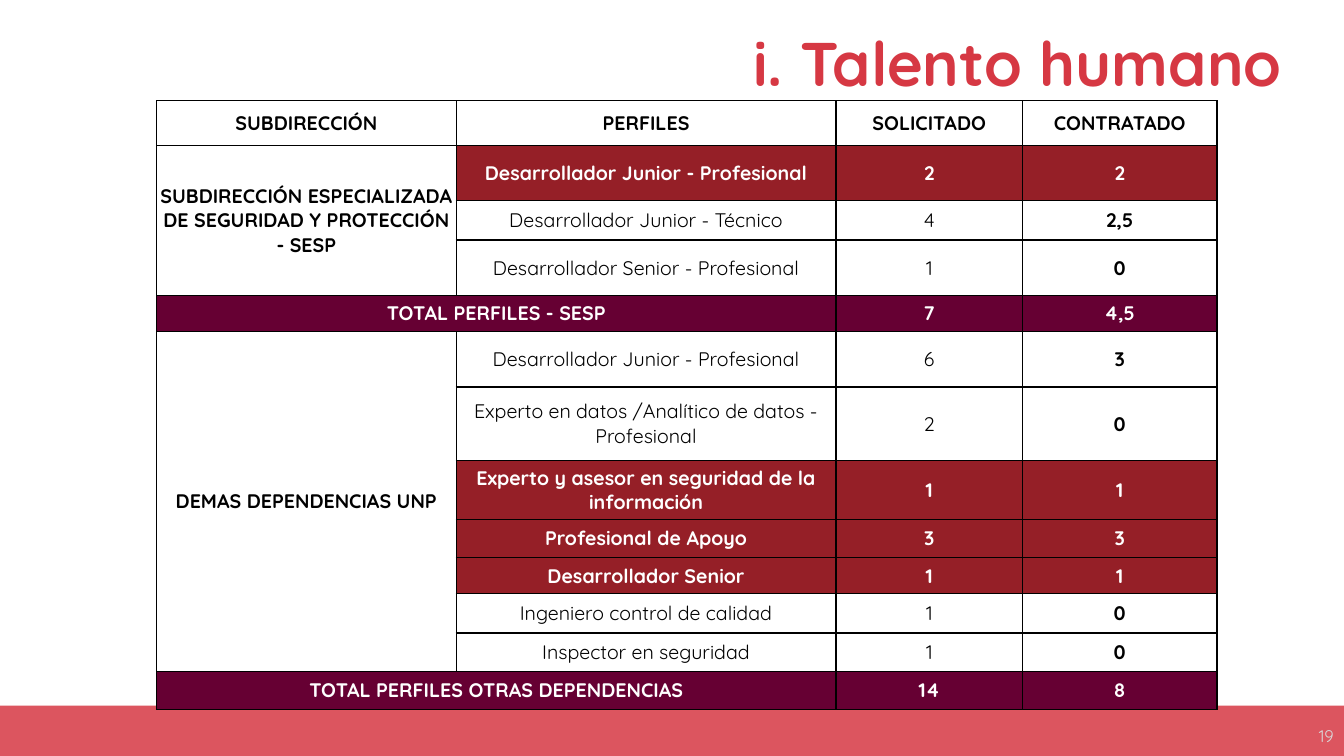
from lxml import etree
from pptx import Presentation
from pptx import util as u
from pptx.dml.color import RGBColor
from pptx.enum import shapes, text
from pptx.oxml.ns import qn

Pt = u.Pt
FONT = "Quicksand"
COLORS = {
    "red": "D63843",
    "hired": "951F27",
    "total": "660033",
    "black": "000000",
    "white": "FFFFFF",
    "grey": "D9D9D9",
}
COLUMN_WIDTHS = [213.8, 271.4, 133.2, 139]
HEADINGS = ["SUBDIRECCIÓN", "PERFILES", "SOLICITADO", "CONTRATADO"]
SESP = "SUBDIRECCIÓN ESPECIALIZADA DE SEGURIDAD Y PROTECCIÓN - SESP"
ROWS = [
    ("heading", 31.7, HEADINGS),
    ("hired", 39.6, [SESP, "Desarrollador Junior - Profesional", "2", "2"]),
    ("open", 28.1, ["", "Desarrollador Junior - Técnico", "4", "2,5"]),
    ("open", 39.6, ["", "Desarrollador Senior - Profesional", "1", "0"]),
    ("total", 25.9, ["TOTAL PERFILES - SESP", "", "7", "4,5"]),
    ("open", 39.6, ["DEMAS DEPENDENCIAS UNP", "Desarrollador Junior - Profesional", "6", "3"]),
    ("open", 52.6, ["", "Experto en datos /Analítico de datos - Profesional", "2", "0"]),
    ("hired", 41.8, ["", "Experto y asesor en seguridad de la información", "1", "1"]),
    ("hired", 27.4, ["", "Profesional de Apoyo", "3", "3"]),
    ("hired", 25.9, ["", "Desarrollador Senior", "1", "1"]),
    ("open", 28.1, ["", "Ingeniero control de calidad", "1", "0"]),
    ("open", 27.4, ["", "Inspector en seguridad", "1", "0"]),
    ("total", 27.4, ["TOTAL PERFILES OTRAS DEPENDENCIAS", "", "14", "8"]),
]
MERGES = [((1, 0), (3, 0)), ((4, 0), (4, 1)), ((5, 0), (11, 0)), ((12, 0), (12, 1))]


def color(name):
    return RGBColor.from_string(COLORS[name])


def write(frame, wording, size, ink, bold, align):
    frame.text = wording
    paragraph = frame.paragraphs[0]
    paragraph.alignment = align
    for run in paragraph.runs:
        run.font.name = FONT
        run.font.size = Pt(size)
        run.font.bold = bold
        run.font.color.rgb = color(ink)


def add_band(slide):
    band = slide.shapes.add_shape(
        shapes.MSO_SHAPE.RECTANGLE, Pt(-12.2), Pt(504), Pt(985), Pt(44.6))
    band.shadow.inherit = False
    band.line.fill.background()
    band.fill.solid()
    band.fill.fore_color.rgb = color("red")
    tint = band.fill._xPr.find(qn("a:solidFill"))[0]
    etree.SubElement(tint, qn("a:alpha"), val="85000")


def set_title(slide, wording):
    title = slide.shapes.title
    title.left, title.top = Pt(95), Pt(-5)
    title.width, title.height = Pt(828), Pt(104.4)
    frame = title.text_frame
    frame.auto_size = text.MSO_AUTO_SIZE.NONE
    frame.vertical_anchor = text.MSO_ANCHOR.MIDDLE
    write(frame, wording, 44, "red", True, text.PP_ALIGN.RIGHT)
    frame.paragraphs[0].line_spacing = 0.9


def add_page_number(slide, number):
    box = slide.shapes.add_textbox(Pt(743.8), Pt(511.2), Pt(216), Pt(28.8))
    frame = box.text_frame
    frame.word_wrap = True
    frame.vertical_anchor = text.MSO_ANCHOR.MIDDLE
    write(frame, number, 12, "grey", False, text.PP_ALIGN.RIGHT)


def add_borders(cell):
    properties = cell._tc.get_or_add_tcPr()
    for side in ("lnL", "lnR", "lnT", "lnB"):
        border = etree.SubElement(properties, qn(f"a:{side}"), w=str(Pt(1)))
        fill = etree.SubElement(border, qn("a:solidFill"))
        etree.SubElement(fill, qn("a:srgbClr"), val=COLORS["black"])


def format_cell(cell, kind, column, wording):
    cell.margin_left = cell.margin_right = cell.margin_top = cell.margin_bottom = 0
    cell.vertical_anchor = text.MSO_ANCHOR.MIDDLE
    add_borders(cell)
    filled = kind == "total" or (kind == "hired" and column > 0)
    if filled:
        cell.fill.solid()
        cell.fill.fore_color.rgb = color(kind)
    else:
        cell.fill.background()
    bold = kind != "open" or column in (0, 3)
    ink = "white" if filled else "black"
    write(cell.text_frame, wording, 14, ink, bold, text.PP_ALIGN.CENTER)


def add_profiles_table(slide):
    heights = [height for _, height, _ in ROWS]
    table = slide.shapes.add_table(
        len(ROWS), len(COLUMN_WIDTHS), Pt(112), Pt(72),
        Pt(sum(COLUMN_WIDTHS)), Pt(sum(heights))).table
    table.first_row = table.horz_banding = False
    for column, width in zip(table.columns, COLUMN_WIDTHS):
        column.width = Pt(width)
    for r, (kind, height, wordings) in enumerate(ROWS):
        table.rows[r].height = Pt(height)
        for c, wording in enumerate(wordings):
            format_cell(table.cell(r, c), kind, c, wording)
    for first, last in MERGES:
        table.cell(*first).merge(table.cell(*last))


def main():
    deck = Presentation()
    deck.slide_width, deck.slide_height = Pt(960), Pt(540)
    slide = deck.slides.add_slide(deck.slide_layouts[5])
    add_band(slide)
    set_title(slide, "i. Talento humano")
    add_page_number(slide, "19")
    add_profiles_table(slide)
    deck.save("out.pptx")


if __name__ == "__main__":
    main()
